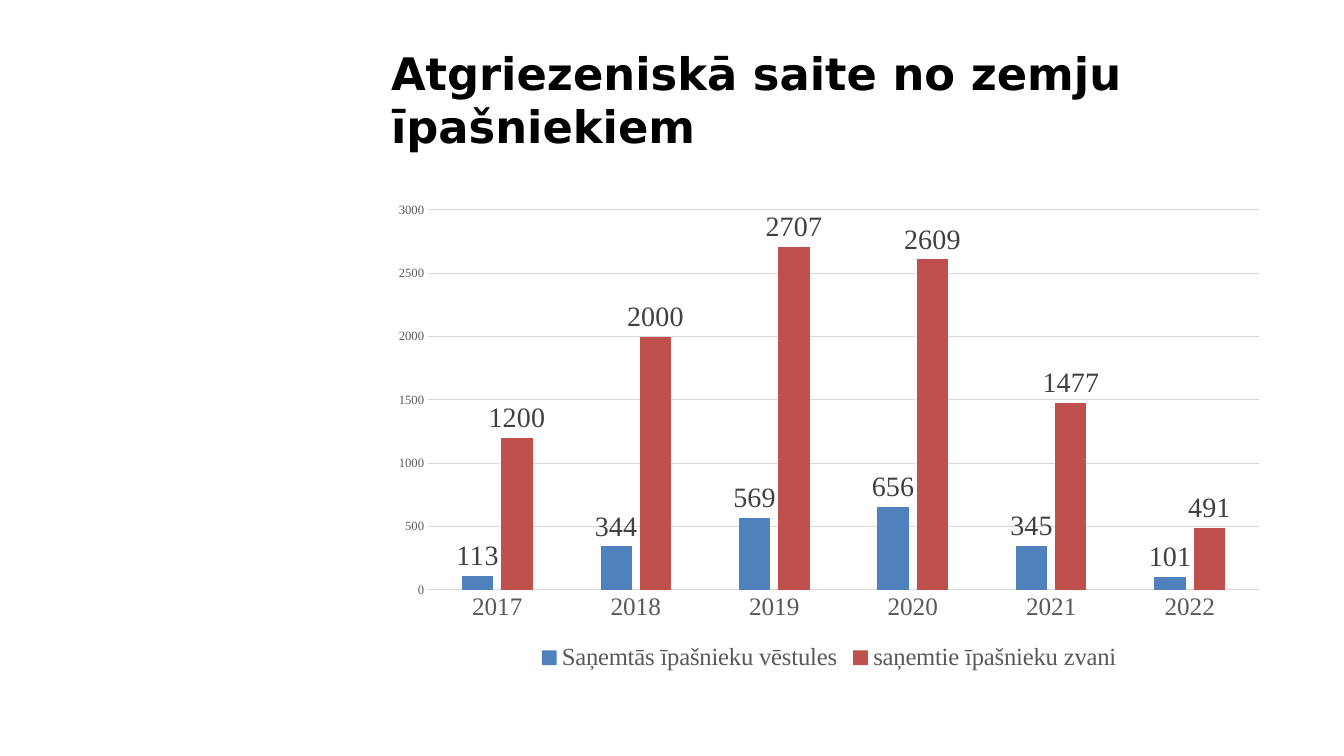
from lxml import etree
from pptx import Presentation
from pptx.chart.data import CategoryChartData
from pptx.dml.color import RGBColor
from pptx.enum.chart import XL_CHART_TYPE, XL_LABEL_POSITION, XL_LEGEND_POSITION, XL_TICK_MARK
from pptx.enum.text import MSO_ANCHOR, MSO_AUTO_SIZE, PP_ALIGN
from pptx.oxml.ns import qn
from pptx.util import Pt

COLUMN_CLUSTERED = XL_CHART_TYPE.COLUMN_CLUSTERED
OUTSIDE_END = XL_LABEL_POSITION.OUTSIDE_END
LEGEND_BOTTOM = XL_LEGEND_POSITION.BOTTOM
NO_TICK = XL_TICK_MARK.NONE
MIDDLE = MSO_ANCHOR.MIDDLE
NO_AUTO_SIZE = MSO_AUTO_SIZE.NONE
LEFT = PP_ALIGN.LEFT

BLACK = RGBColor(0x00, 0x00, 0x00)
WHITE = RGBColor(0xFF, 0xFF, 0xFF)
DARK_GRAY = RGBColor(0x40, 0x40, 0x40)
GRAY = RGBColor(0x59, 0x59, 0x59)
LIGHT_GRAY = RGBColor(0xD9, 0xD9, 0xD9)
BLUE = RGBColor(0x4F, 0x81, 0xBD)
RED = RGBColor(0xC0, 0x50, 0x4D)

TITLE_FONT = "DejaVu Sans"
CHART_FONT = "Times New Roman"
EMU_PER_PX = 914400 / 100.8

SLIDE_SIZE = (1344, 756)
TITLE_BOX = (381, 42, 896, 114)
CHART_BOX = (381, 194, 896, 482)
PLOT_BOX = (47, 16, 831, 380)

TITLE = "Atgriezeniskā saite no zemju īpašniekiem"
YEARS = ["2017", "2018", "2019", "2020", "2021", "2022"]
SERIES = [
    ("Saņemtās īpašnieku vēstules", [113, 344, 569, 656, 345, 101], BLUE),
    ("saņemtie īpašnieku zvani", [1200, 2000, 2707, 2609, 1477, 491], RED),
]


def px(length):
    return round(length * EMU_PER_PX)


def set_attributes(target, **values):
    for name, value in values.items():
        setattr(target, name, value)


def format_font(font, size, color, name=CHART_FONT, bold=False):
    set_attributes(font, size=Pt(size), name=name, bold=bold)
    font.color.rgb = color


def format_line(line, color):
    line.color.rgb = color
    line.width = Pt(0.75)


def place_title(slide, box):
    title = slide.shapes.title
    left, top, width, height = map(px, box)
    set_attributes(title, left=left, top=top, width=width, height=height)
    frame = title.text_frame
    set_attributes(
        frame, text=TITLE, word_wrap=True, auto_size=NO_AUTO_SIZE, vertical_anchor=MIDDLE,
        margin_left=px(10), margin_right=px(10), margin_top=px(5), margin_bottom=px(5),
    )
    paragraph = frame.paragraphs[0]
    set_attributes(paragraph, alignment=LEFT, line_spacing=1.0)
    format_font(paragraph.runs[0].font, 32, BLACK, TITLE_FONT, True)


def place_plot(chart, chart_box, plot_box):
    plot_area = chart.plots[0]._element.getparent()
    for layout in plot_area.findall(qn("c:layout")):
        plot_area.remove(layout)
    layout = etree.Element(qn("c:layout"))
    plot_area.insert(0, layout)
    manual = etree.SubElement(layout, qn("c:manualLayout"))
    values = [("layoutTarget", "inner"), ("xMode", "edge"), ("yMode", "edge")]
    for name, part, whole in zip("xywh", plot_box, chart_box[2:] * 2):
        values.append((name, f"{part / whole:.4f}"))
    for name, value in values:
        etree.SubElement(manual, qn(f"c:{name}"), val=value)


def format_axes(chart):
    for axis, size in ((chart.category_axis, 18), (chart.value_axis, 9)):
        set_attributes(axis, major_tick_mark=NO_TICK, minor_tick_mark=NO_TICK)
        format_font(axis.tick_labels.font, size, GRAY)
    format_line(chart.category_axis.format.line, LIGHT_GRAY)
    value_axis = chart.value_axis
    value_axis.format.line.fill.background()
    set_attributes(value_axis, minimum_scale=0, maximum_scale=3000, major_unit=500)
    format_line(value_axis.major_gridlines.format.line, LIGHT_GRAY)


def format_series(series, color):
    fill = series.format.fill
    fill.solid()
    fill.fore_color.rgb = color
    labels = series.data_labels
    set_attributes(labels, show_value=True, position=OUTSIDE_END)
    format_font(labels.font, 20, DARK_GRAY)


def add_feedback_chart(slide, box):
    data = CategoryChartData()
    data.categories = YEARS
    for name, values, _ in SERIES:
        data.add_series(name, values)
    chart = slide.shapes.add_chart(COLUMN_CLUSTERED, *map(px, box), data).chart
    set_attributes(chart, has_title=False, has_legend=True)
    format_font(chart.font, 10, BLACK)
    set_attributes(chart.legend, position=LEGEND_BOTTOM, include_in_layout=False)
    format_font(chart.legend.font, 17.6, GRAY)
    plot = chart.plots[0]
    set_attributes(plot, gap_width=219, overlap=-27, vary_by_categories=False)
    for series, (_, _, color) in zip(plot.series, SERIES):
        format_series(series, color)
    format_axes(chart)
    place_plot(chart, box, PLOT_BOX)


def main():
    presentation = Presentation()
    width, height = map(px, SLIDE_SIZE)
    set_attributes(presentation, slide_width=width, slide_height=height)
    slide = presentation.slides.add_slide(presentation.slide_layouts.get_by_name("Title Only"))
    background = slide.background.fill
    background.solid()
    background.fore_color.rgb = WHITE
    place_title(slide, TITLE_BOX)
    add_feedback_chart(slide, CHART_BOX)
    presentation.save("out.pptx")


if __name__ == "__main__":
    main()
